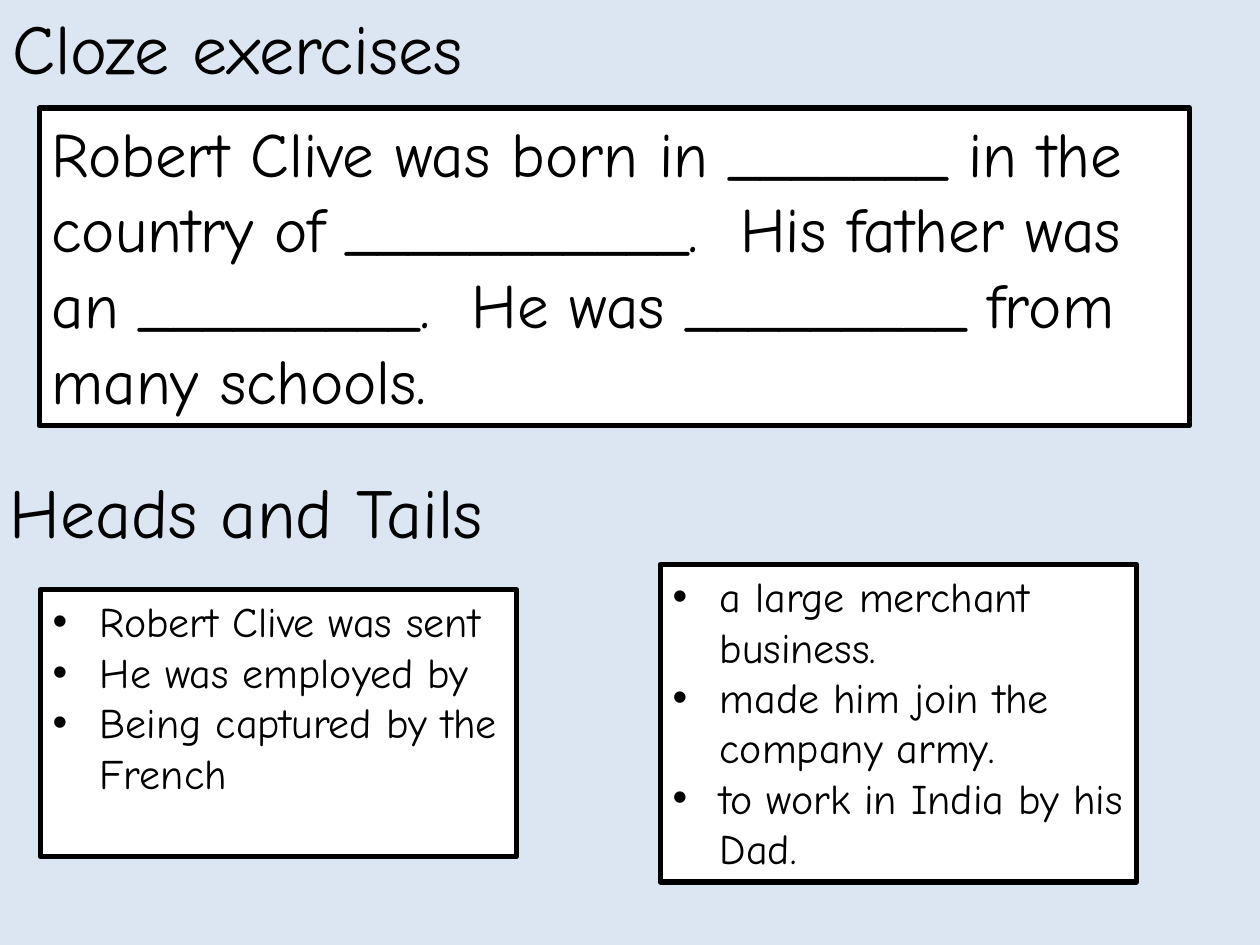
from lxml.etree import SubElement
from pptx import Presentation
from pptx.dml.color import RGBColor
from pptx.oxml.ns import qn
from pptx.util import Cm, Pt

FONT = "Comic Neue"
BLACK, WHITE, PALE_BLUE = "000000", "FFFFFF", "DCE6F2"
BULLET_INDENT = Cm(0.95)

# Content: left, top, width, height in cm
HEADINGS = [
    ("Cloze exercises", (0, -0.03, 24, 5.38)),
    ("Heads and Tails", (-0.05, 9.32, 24, 5.38)),
]
CLOZE = (
    "Robert Clive was born in _______ in the country of ___________.  "
    "His father was an _________.  He was _________ from many schools.",
    (0.79, 2.18, 23.19, 6.4),
)
MATCHING_LISTS = [
    (["Robert Clive was sent",
      "He was employed by",
      "Being captured by the French"], (0.81, 11.89, 9.6, 5.38)),
    (["a large merchant business.",
      "made him join the company army.",
      "to work in India by his Dad."], (13.31, 11.38, 9.6, 6.4)),
]


def color(hex_string):
    return RGBColor.from_string(hex_string)


def add_bullet(paragraph):
    properties = paragraph._p.get_or_add_pPr()
    properties.set("marL", str(BULLET_INDENT))
    properties.set("indent", str(-BULLET_INDENT))
    SubElement(properties, qn("a:buFont"), typeface="Arial")
    SubElement(properties, qn("a:buChar"), char="•")


def add_text(slide, lines, place, size, boxed=False, bulleted=False):
    shape = slide.shapes.add_textbox(*map(Cm, place))
    if boxed:
        shape.fill.solid()
        shape.fill.fore_color.rgb = color(WHITE)
        shape.line.color.rgb = color(BLACK)
        shape.line.width = Pt(3)
    text_frame = shape.text_frame
    text_frame.word_wrap = True
    text_frame.text = "\n".join(lines)
    for paragraph in text_frame.paragraphs:
        if bulleted:
            add_bullet(paragraph)
        for run in paragraph.runs:
            run.font.name = FONT
            run.font.size = Pt(size)
            run.font.color.rgb = color(BLACK)


def main():
    presentation = Presentation()
    presentation.slide_width, presentation.slide_height = Cm(25.4), Cm(19.05)
    slide = presentation.slides.add_slide(presentation.slide_layouts[6])
    slide.background.fill.solid()
    slide.background.fill.fore_color.rgb = color(PALE_BLUE)

    # Section headings
    for heading, place in HEADINGS:
        add_text(slide, [heading], place, 40)

    # Gap-fill paragraph
    cloze_text, cloze_place = CLOZE
    add_text(slide, [cloze_text], cloze_place, 36, boxed=True)

    # Sentence halves to match
    for lines, place in MATCHING_LISTS:
        add_text(slide, lines, place, 24, boxed=True, bulleted=True)

    presentation.save("out.pptx")


if __name__ == "__main__":
    main()
